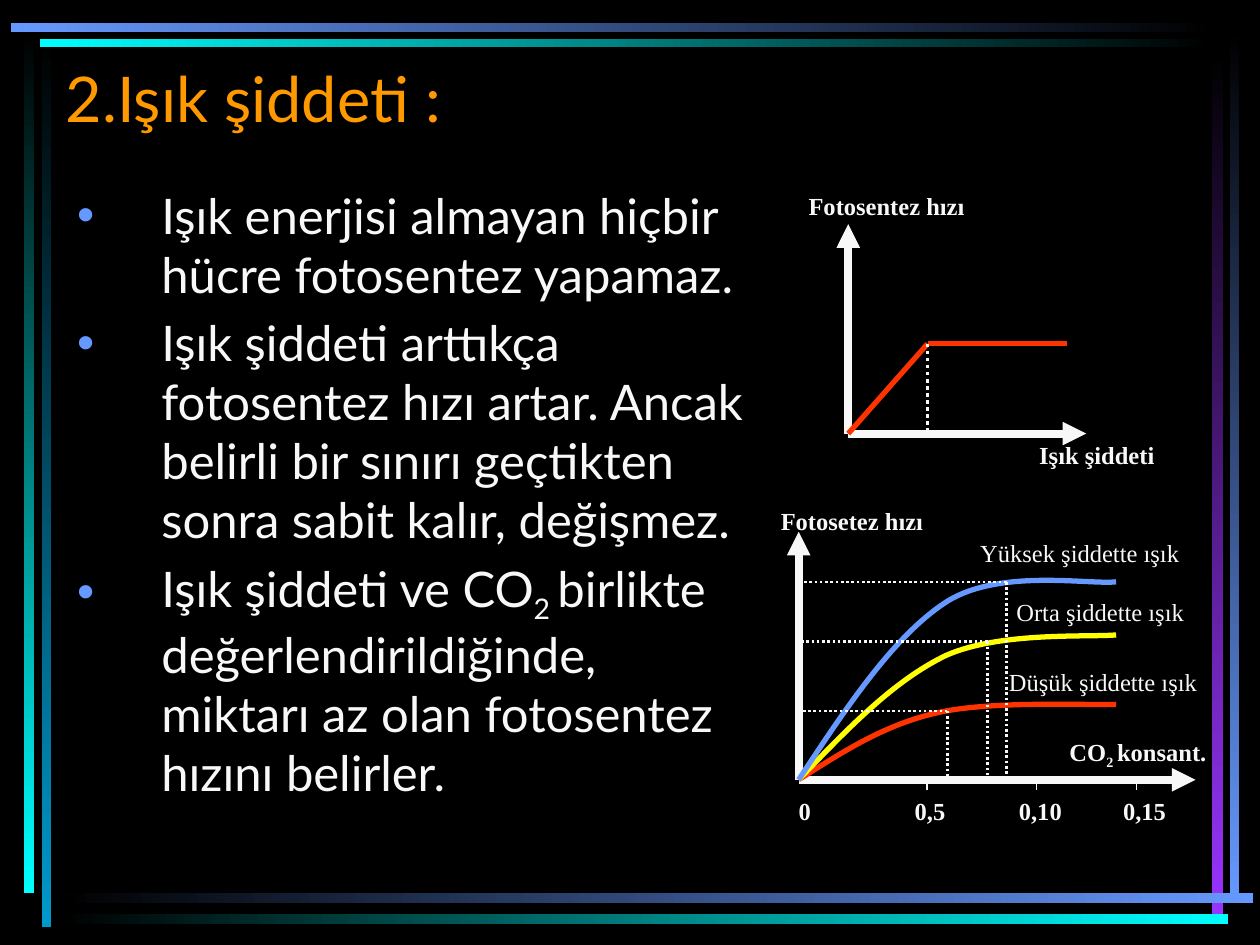
"""Build the slide on light intensity and the rate of photosynthesis."""
from typing import NamedTuple

from lxml.etree import SubElement
from pptx import Presentation
from pptx.dml.color import RGBColor
from pptx.enum.dml import MSO_LINE
from pptx.enum.shapes import MSO_CONNECTOR, MSO_SHAPE
from pptx.enum.text import MSO_ANCHOR, MSO_AUTO_SIZE as Auto, PP_ALIGN
from pptx.oxml.ns import qn
from pptx.util import Cm, Pt

WHITE, BLUE, CYAN, RED = "F8F8F8", "6699FF", "00FFFF", "FF3300"
Point = tuple[float, float]


class Bar(NamedTuple):
    x: float
    y: float
    w: float
    h: float
    start: str
    end: str


class Line(NamedTuple):
    a: Point
    b: Point
    width: float
    color: str = WHITE
    dots: bool = False
    arrow: bool = False


class Curve(NamedTuple):
    color: str
    pts: list[Point]


class Label(NamedTuple):
    text: str
    x: float
    y: float
    w: float
    bold: bool = True


BARS = [
    Bar(0.84, 0.71, 0.2, 17.98, "000000", "0099CC"),
    Bar(0.48, 0.64, 0.2, 17.37, "000000", CYAN),
    Bar(24.79, 0.61, 0.18, 17.6, "000000", BLUE),
    Bar(24.43, 1.07, 0.23, 17.35, "000000", "9933FF"),
    Bar(1.14, 18.01, 24.13, 0.2, "000000", BLUE),
    Bar(1.14, 18.42, 23.62, 0.2, "000000", CYAN),
    Bar(0.81, 0.79, 23.67, 0.15, CYAN, "000000"),
    Bar(0.22, 0.47, 24.28, 0.18, BLUE, "000000"),
]
BODY = [
    "Işık enerjisi almayan hiçbir hücre fotosentez yapamaz.",
    "Işık şiddeti arttıkça fotosentez hızı artar. Ancak belirli bir sınırı "
    "geçtikten sonra sabit kalır, değişmez.",
    "Işık şiddeti ve CO|2 |birlikte değerlendirildiğinde, miktarı az olan "
    "fotosentez hızını belirler.",
]
ZERO, KNEE = (17.1, 8.74), (18.7, 6.93)
BASE = (16.1, 15.72)
TICKS = [18.69, 20.9, 22.91]
GUIDES = [(19.1, 14.33), (19.91, 12.93), (20.29, 11.73)]
CURVES = [
    Curve(RED, [(16.94, 15.19), (17.78, 14.63), (18.85, 14.38),
                (19.91, 14.12), (21.89, 14.22), (22.5, 14.2)]),
    Curve("FFFF00", [(17.07, 14.71), (18.01, 13.72), (19.08, 13.21),
                     (20.17, 12.73), (21.95, 12.85), (22.5, 12.8)]),
    Curve(BLUE, [(17.07, 14.25), (18.03, 12.8), (19.1, 12.12),
                 (20.17, 11.46), (21.95, 11.79), (22.5, 11.73)]),
]
SCALE = Label("0\t0,5\t0,10\t0,15", 15.85, 15.93, 8.05)
LABELS = [
    Label("Fotosentez hızı", 16.05, 3.73, 4.24),
    Label("Işık şiddeti", 20.7, 8.74, 3.2),
    Label("CO|2 |konsant.", 21.31, 14.73, 3.61),
    Label("Düşük şiddette ışık", 20.09, 13.33, 4.6, False),
    Label("Orta şiddette ışık", 20.24, 11.91, 4.06, False),
    Label("Yüksek şiddette ışık", 19.51, 10.72, 4.8, False),
    Label("Fotosetez hızı", 15.49, 10.08, 4.6),
]


def paint(hue: str) -> RGBColor:
    return RGBColor.from_string(hue)


def write(para, text: str, size: float, font: str, color: str, bold: bool = False) -> None:
    for i, part in enumerate(text.split("|")):
        run = para.add_run()
        run.text = part
        run.font.size, run.font.name, run.font.bold = Pt(size), font, bold
        run.font.color.rgb = paint(color)
        if i % 2:
            run._r.get_or_add_rPr().set("baseline", "-25000")


def place(shape, x: float, y: float, w: float, h: float):
    shape.left, shape.top, shape.width, shape.height = map(Cm, (x, y, w, h))
    frame = shape.text_frame
    frame.word_wrap, frame.auto_size = True, Auto.NONE
    frame.vertical_anchor = MSO_ANCHOR.TOP
    return frame


def draw_bar(shapes, bar: Bar) -> None:
    shape = shapes.add_shape(MSO_SHAPE.RECTANGLE, *map(Cm, bar[:4]))
    shape.shadow.inherit = False
    shape.line.fill.background()
    shape.fill.gradient()
    shape.fill.gradient_angle = 270 if bar.h > bar.w else 0
    for stop, hue in zip(shape.fill.gradient_stops, (bar.start, bar.end)):
        stop.color.rgb = paint(hue)


def draw_line(shapes, line: Line) -> None:
    shape = shapes.add_connector(MSO_CONNECTOR.STRAIGHT, *map(Cm, line.a + line.b))
    shape.line.width = Pt(line.width)
    shape.line.color.rgb = paint(line.color)
    if line.dots:
        shape.line.dash_style = MSO_LINE.ROUND_DOT
    props = shape._element.spPr
    if line.arrow:
        SubElement(props.find(qn("a:ln")), qn("a:tailEnd"), type="triangle")
    SubElement(props, qn("a:effectLst"))


def draw_curve(shapes, curve: Curve) -> None:
    pen = shapes.build_freeform(*map(Cm, BASE))
    pen.add_line_segments([(Cm(x), Cm(y)) for x, y in curve.pts], close=False)
    shape = pen.convert_to_shape()
    shape.shadow.inherit = False
    shape.fill.background()
    shape.line.color.rgb = paint(curve.color)
    shape.line.width = Pt(3)
    track = next(shape._element.iter(qn("a:path")))
    steps = track.findall(qn("a:lnTo"))
    for i in range(0, len(steps), 3):
        bend = SubElement(track, qn("a:cubicBezTo"))
        for step in steps[i:i + 3]:
            bend.append(step[0])
            track.remove(step)


def draw_label(shapes, label: Label):
    box = shapes.add_textbox(0, 0, 0, 0)
    para = place(box, label.x, label.y, label.w, 0.84).paragraphs[0]
    write(para, label.text, 14, "Times New Roman", WHITE, label.bold)
    return para


def fill_text(slide) -> None:
    para = place(slide.shapes.title, 1.07, 1.07, 22.23, 2.34).paragraphs[0]
    para.alignment = PP_ALIGN.LEFT
    write(para, "2.Işık şiddeti :", 36, "Lato", "FF9900")
    frame = place(slide.placeholders[1], 1.3, 3.61, 14, 14.12)
    for i, text in enumerate(BODY):
        para = frame.add_paragraph() if i else frame.paragraphs[0]
        para.space_before = Pt(5.6)
        write(para, text, 28, "Lato", WHITE)
        props = para._p.get_or_add_pPr()
        props.set("marL", str(Cm(1.7)))
        props.set("indent", str(-Cm(1.7)))
        SubElement(SubElement(props, qn("a:buClr")), qn("a:srgbClr"), val=BLUE)
        SubElement(props, qn("a:buFont"), typeface="Arial")
        SubElement(props, qn("a:buChar"), char="•")


def draw_axes(shapes, base: Point, top: float, right: float) -> None:
    for end in ((base[0], top), (right, base[1])):
        draw_line(shapes, Line(base, end, 4.5, arrow=True))


def main() -> None:
    deck = Presentation()
    deck.slide_width, deck.slide_height = Cm(25.4), Cm(19.05)
    slide = deck.slides.add_slide(deck.slide_layouts[1])
    slide.background.fill.solid()
    slide.background.fill.fore_color.rgb = paint("000000")
    shapes = slide.shapes
    fill_text(slide)
    for bar in BARS:
        draw_bar(shapes, bar)
    draw_axes(shapes, ZERO, 4.52, 21.9)
    draw_line(shapes, Line(ZERO, KNEE, 3, RED))
    draw_line(shapes, Line(KNEE, (21.51, KNEE[1]), 3, RED))
    draw_line(shapes, Line(KNEE, (KNEE[0], ZERO[1]), 2, dots=True))
    draw_axes(shapes, BASE, 10.72, 24.1)
    for curve in CURVES:
        draw_curve(shapes, curve)
    for x in TICKS:
        draw_line(shapes, Line((x, BASE[1]), (x, 15.93), 0.75))
    for x, y in GUIDES:
        for end in ((x, BASE[1]), (BASE[0], y)):
            draw_line(shapes, Line((x, y), end, 1.5, dots=True))
    for label in LABELS:
        draw_label(shapes, label)
    props = draw_label(shapes, SCALE)._p.get_or_add_pPr()
    tabs = SubElement(props, qn("a:tabLst"))
    for i in range(3):
        SubElement(tabs, qn("a:tab"), pos=str(Cm(2.34 + 2.1 * i)), algn="l")
    deck.save("out.pptx")


if __name__ == "__main__":
    main()
